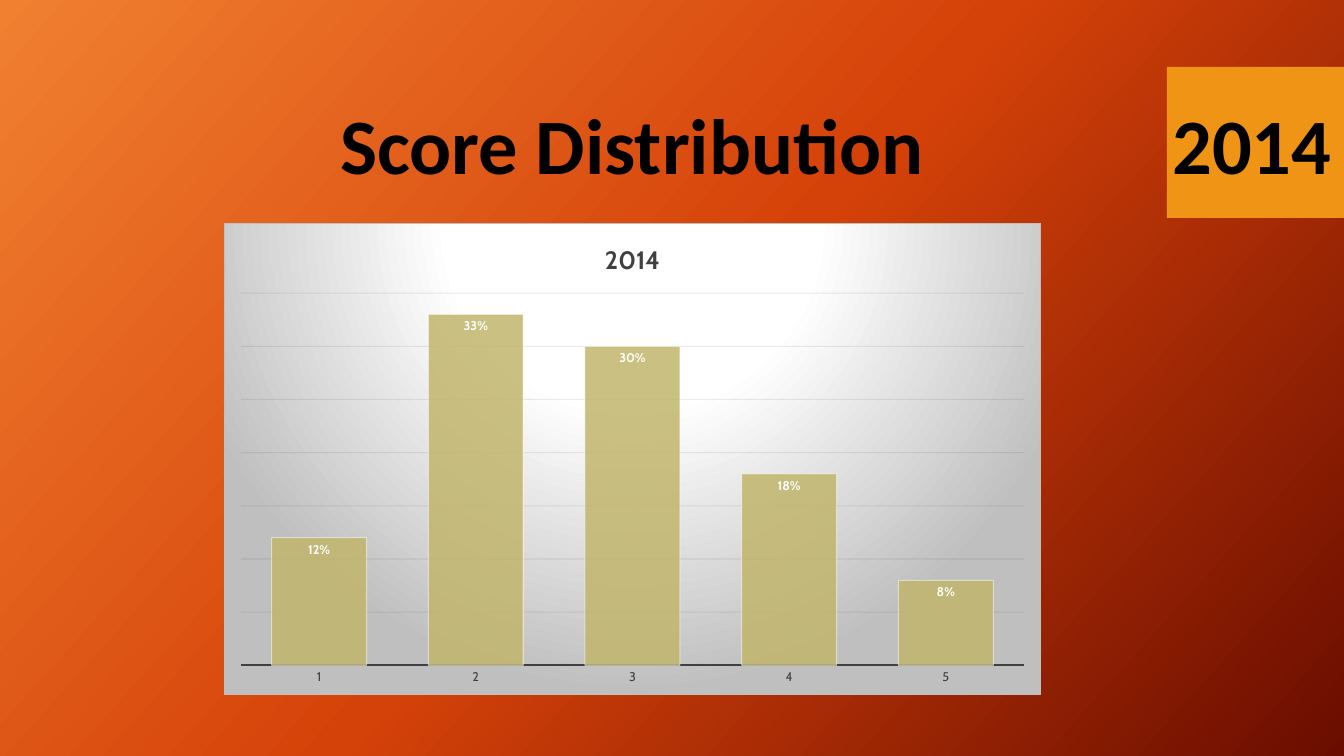
import pptx
import pptx.chart.data
import pptx.dml.color
import pptx.enum.chart
import pptx.enum.shapes
import pptx.enum.text
import pptx.oxml
import pptx.oxml.ns
import pptx.util

PX = 12192000 / 1344


class Theme:
    """Colours, fonts and type sizes of the slide."""
    background = [(0, "F18031"), (50, "D54209"), (100, "6A0D00")]
    panel = [(0, "FFFFFF"), (39, "FFFFFF"), (100, "BFBFBF")]
    tag, bar, border = "F09415", "C1B56B", "BFBFBF"
    ink, muted, light, grid = "000000", "404040", "FFFFFF", "0D0D0D"
    heading_font, chart_font = "Calibri", "Cabin"
    heading_size, chart_title_size, chart_size, label_size = 56, 18, 10, 9


def px(length):
    return pptx.util.Emu(round(length * PX))


def rgb(colour):
    return pptx.dml.color.RGBColor.from_string(colour)


def apply(target, **values):
    for name, value in values.items():
        setattr(target, name, value)


def style_font(font, name, size, colour, bold=False):
    apply(font, name=name, size=pptx.util.Pt(size), bold=bold)
    font.color.rgb = rgb(colour)


def style_line(line, colour, width):
    line.color.rgb = rgb(colour)
    line.width = pptx.util.Pt(width)


def gradient_xml(stops, direction):
    marks = "".join(
        f'<a:gs pos="{place * 1000}"><a:srgbClr val="{colour}"/></a:gs>'
        for place, colour in stops)
    return (f'<a:gradFill {pptx.oxml.ns.nsdecls("a")} rotWithShape="1">'
            f'<a:gsLst>{marks}</a:gsLst>{direction}</a:gradFill>')


def set_alpha(root, query, percent):
    for colour in root.xpath(query + "/a:solidFill/a:srgbClr"):
        colour.append(pptx.oxml.parse_xml(
            f'<a:alpha {pptx.oxml.ns.nsdecls("a")} val="{percent * 1000}"/>'))


class Builder:
    def __init__(self, deck, theme):
        self.theme = theme
        self.page = deck.slides.add_slide(deck.slide_layouts[5])

    def background(self):
        self.page.background.fill.solid()
        holder = self.page.element.xpath(".//p:bgPr")[0]
        direction = f'<a:lin ang="{42 * 60000}" scaled="0"/>'
        holder.replace(holder[0], pptx.oxml.parse_xml(
            gradient_xml(self.theme.background, direction)))

    def rectangle(self, left, top, width, height, colour):
        shape = self.page.shapes.add_shape(
            pptx.enum.shapes.MSO_SHAPE.RECTANGLE,
            *map(px, (left, top, width, height)))
        shape.shadow.inherit = False
        shape.fill.solid()
        shape.fill.fore_color.rgb = rgb(colour)
        shape.line.fill.background()

    def heading(self, box, text, left, top, width, height):
        apply(box, left=px(left), top=px(top), width=px(width), height=px(height))
        apply(box.text_frame, text=text, word_wrap=True,
              vertical_anchor=pptx.enum.text.MSO_ANCHOR.TOP,
              auto_size=pptx.enum.text.MSO_AUTO_SIZE.SHAPE_TO_FIT_TEXT)
        para = box.text_frame.paragraphs[0]
        apply(para, alignment=pptx.enum.text.PP_ALIGN.CENTER,
              space_before=pptx.util.Pt(0), space_after=pptx.util.Pt(6))
        style_font(para.runs[0].font, self.theme.heading_font,
                   self.theme.heading_size, self.theme.ink, True)

    def title(self, text, *place):
        self.heading(self.page.shapes.title, text, *place)

    def text(self, text, *place):
        box = self.page.shapes.add_textbox(*map(px, place))
        self.heading(box, text, *place)

    def column_chart(self, name, scores, left, top, width, height):
        theme = self.theme
        data = pptx.chart.data.CategoryChartData(number_format="0%")
        data.categories = list(scores)
        data.add_series(name, list(scores.values()))
        chart = self.page.shapes.add_chart(
            pptx.enum.chart.XL_CHART_TYPE.COLUMN_CLUSTERED,
            *map(px, (left, top, width, height)), data).chart
        chart.has_legend = False
        style_font(chart.font, theme.chart_font, theme.chart_size, theme.light)

        # Chart title
        chart.has_title = True
        chart.chart_title.include_in_layout = False
        chart.chart_title.text_frame.text = name
        span = chart.chart_title.text_frame.paragraphs[0].runs[0]
        style_font(span.font, theme.chart_font, theme.chart_title_size,
                   theme.muted, True)

        # Axes and grid
        no_tick = pptx.enum.chart.XL_TICK_MARK.NONE
        apply(chart.category_axis, major_tick_mark=no_tick, minor_tick_mark=no_tick)
        style_font(chart.category_axis.tick_labels.font, theme.chart_font,
                   theme.label_size, theme.muted)
        style_line(chart.category_axis.format.line, theme.muted, 1.5)
        apply(chart.value_axis, visible=False, has_major_gridlines=True,
              minimum_scale=0, maximum_scale=0.35, major_unit=0.05)
        style_line(chart.value_axis.major_gridlines.format.line, theme.grid, 0.75)

        # Columns and their labels
        plot = chart.plots[0]
        apply(plot, gap_width=65, vary_by_categories=False, has_data_labels=True)
        series = plot.series[0]
        series.format.fill.solid()
        series.format.fill.fore_color.rgb = rgb(theme.bar)
        style_line(series.format.line, theme.light, 0.75)
        apply(plot.data_labels, show_value=True, number_format="0%",
              number_format_is_linked=False,
              position=pptx.enum.chart.XL_LABEL_POSITION.INSIDE_END)
        style_font(plot.data_labels.font, theme.chart_font, theme.label_size,
                   theme.light, True)

        # Transparency
        root = chart.element
        set_alpha(root, ".//c:ser/c:spPr", 85)
        set_alpha(root, ".//c:ser/c:spPr/a:ln", 50)
        set_alpha(root, ".//c:majorGridlines/c:spPr/a:ln", 7)

        # Panel behind the columns
        direction = ('<a:path path="circle"><a:fillToRect l="50000" t="-80000" '
                     'r="50000" b="180000"/></a:path>')
        root.xpath("./c:chart")[0].addnext(pptx.oxml.parse_xml(
            f'<c:spPr {pptx.oxml.ns.nsdecls("c", "a")}>'
            f'{gradient_xml(theme.panel, direction)}'
            f'<a:ln w="{pptx.util.Pt(0.75)}"><a:solidFill>'
            f'<a:srgbClr val="{theme.border}"/></a:solidFill></a:ln></c:spPr>'))


def main():
    deck = pptx.Presentation()
    apply(deck, slide_width=px(1344), slide_height=px(756))
    builder = Builder(deck, Theme)
    builder.background()
    builder.rectangle(1167, 67, 177, 151, Theme.tag)
    scores = {"1": 0.12, "2": 0.33, "3": 0.3, "4": 0.18, "5": 0.08}
    builder.column_chart("2014", scores, 224, 223, 817, 472)
    builder.text("2014", 1152, 91, 200, 105)
    builder.title("Score Distribution", 157, 91, 950, 105)
    deck.save("out.pptx")


if __name__ == "__main__":
    main()
